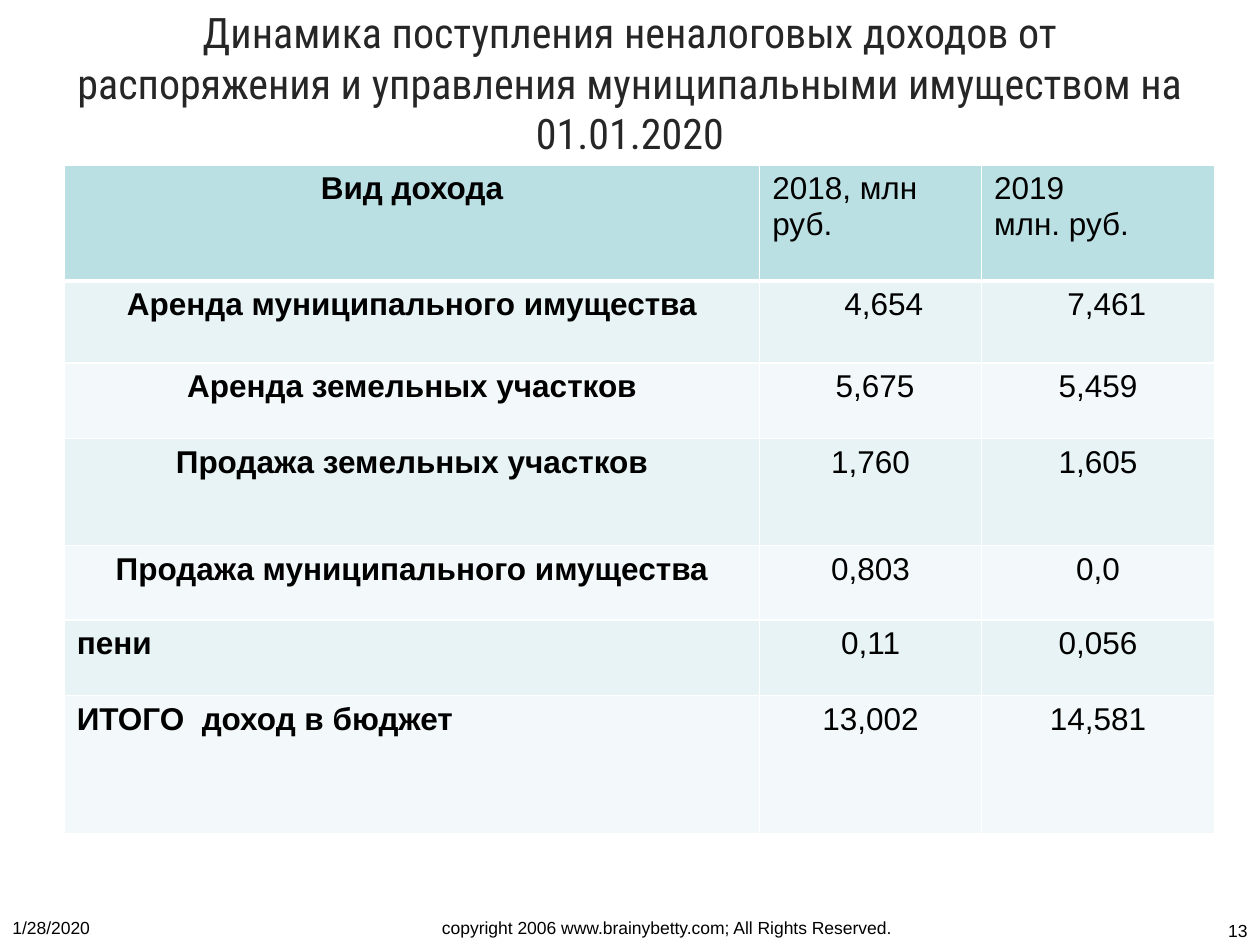
from dataclasses import dataclass

from lxml import etree
from pptx import Presentation
from pptx.dml.color import RGBColor
from pptx.enum.text import MSO_ANCHOR, PP_ALIGN
from pptx.oxml.ns import qn
from pptx.util import Inches, Pt

LEFT, MID, RIGHT = PP_ALIGN.LEFT, PP_ALIGN.CENTER, PP_ALIGN.RIGHT
TOP, CENTER = MSO_ANCHOR.TOP, MSO_ANCHOR.MIDDLE
BLACK = RGBColor(0x00, 0x00, 0x00)
DARK = RGBColor(0x26, 0x26, 0x26)
WHITE = RGBColor(0xFF, 0xFF, 0xFF)
TEAL = RGBColor(0xBB, 0xE0, 0xE3)
BANDS = (RGBColor(0xE7, 0xF3, 0xF4), RGBColor(0xF3, 0xF9, 0xFA))

HEAD = {"name": "Roboto Condensed", "size": Pt(24)}
FOOT = {"name": "Arial", "size": Pt(10)}
BODY = {"name": "Arial", "size": Pt(18), "bold": False}
BOLD = BODY | {"bold": True}

WIDTHS = (5.52, 1.76, 1.85)
HEIGHTS = (0.92, 0.65, 0.6, 0.85, 0.59, 0.6, 1.1)


@dataclass
class Label:
    text: str
    box: tuple
    form: dict
    align: PP_ALIGN
    color: RGBColor = BLACK
    anchor: MSO_ANCHOR = TOP


@dataclass
class Row:
    cells: tuple
    align: PP_ALIGN = MID
    rest: PP_ALIGN = MID
    shifts: tuple = (0, 0, 0)


LABELS = (
    Label("Динамика поступления неналоговых доходов от распоряжения и управления "
          "муниципальными имуществом на 01.01.2020",
          (0.5, 0, 9, 1.31), HEAD, MID, DARK, CENTER),
    Label("1/28/2020", (0, 7.23, 2.33, 0.27), FOOT, LEFT),
    Label("copyright 2006 www.brainybetty.com; All Rights Reserved.",
          (2.58, 7.23, 5.42, 0.27), FOOT, MID),
    Label("13", (8.67, 7.25, 1.33, 0.25), FOOT, RIGHT),
)
ROWS = (
    Row(("Вид дохода", "2018, млн руб.", "2019\nмлн. руб."), rest=LEFT),
    Row(("Аренда муниципального имущества", "4,654", "7,461"), shifts=(0, 0.21, 0.14)),
    Row(("Аренда земельных участков", "5,675", "5,459"), shifts=(0, 0.07, 0)),
    Row(("Продажа земельных участков", "1,760", "1,605")),
    Row(("Продажа муниципального имущества", "0,803", "0,0")),
    Row(("пени", "0,11", "0,056"), LEFT),
    Row(("ИТОГО  доход в бюджет", "13,002", "14,581"), LEFT),
)


def write(frame, text: str, form: dict, align: PP_ALIGN, color: RGBColor) -> None:
    frame.text = text
    for para in frame.paragraphs:
        para.alignment = align
        for run in para.runs:
            for key, value in form.items():
                setattr(run.font, key, value)
            run.font.color.rgb = color


def add_label(slide, label: Label) -> None:
    frame = slide.shapes.add_textbox(*map(Inches, label.box)).text_frame
    frame.word_wrap = True
    frame.vertical_anchor = label.anchor
    write(frame, label.text, label.form, label.align, label.color)


def add_edges(cell, widths: dict) -> None:
    props = cell._tc.get_or_add_tcPr()
    for side, width in widths.items():
        line = etree.SubElement(props, qn(f"a:ln{side}"), w=str(Pt(width)))
        fill = etree.SubElement(line, qn("a:solidFill"))
        etree.SubElement(fill, qn("a:srgbClr"), val=str(WHITE))


def add_grid(slide) -> None:
    size = map(Inches, (0.51, 1.31, sum(WIDTHS), sum(HEIGHTS)))
    grid = slide.shapes.add_table(len(ROWS), len(WIDTHS), *size).table
    for col, width in zip(grid.columns, WIDTHS):
        col.width = Inches(width)
    for i, (row, height) in enumerate(zip(ROWS, HEIGHTS)):
        grid.rows[i].height = Inches(height)
        for j, text in enumerate(row.cells):
            cell = grid.cell(i, j)
            edges = {"L": 1, "R": 1, "T": 3 if i == 1 else 1, "B": 1 if i else 3}
            add_edges(cell, edges)
            cell.fill.solid()
            cell.fill.fore_color.rgb = BANDS[(i - 1) % 2] if i else TEAL
            cell.margin_left = Inches(0.1 + row.shifts[j])
            form, align = (BODY, row.rest) if j else (BOLD, row.align)
            write(cell.text_frame, text, form, align, BLACK)


def main() -> None:
    deck = Presentation()
    deck.slide_width, deck.slide_height = Inches(10), Inches(7.5)
    slide = deck.slides.add_slide(deck.slide_layouts[6])
    for label in LABELS:
        add_label(slide, label)
    add_grid(slide)
    deck.save("out.pptx")


if __name__ == "__main__":
    main()
